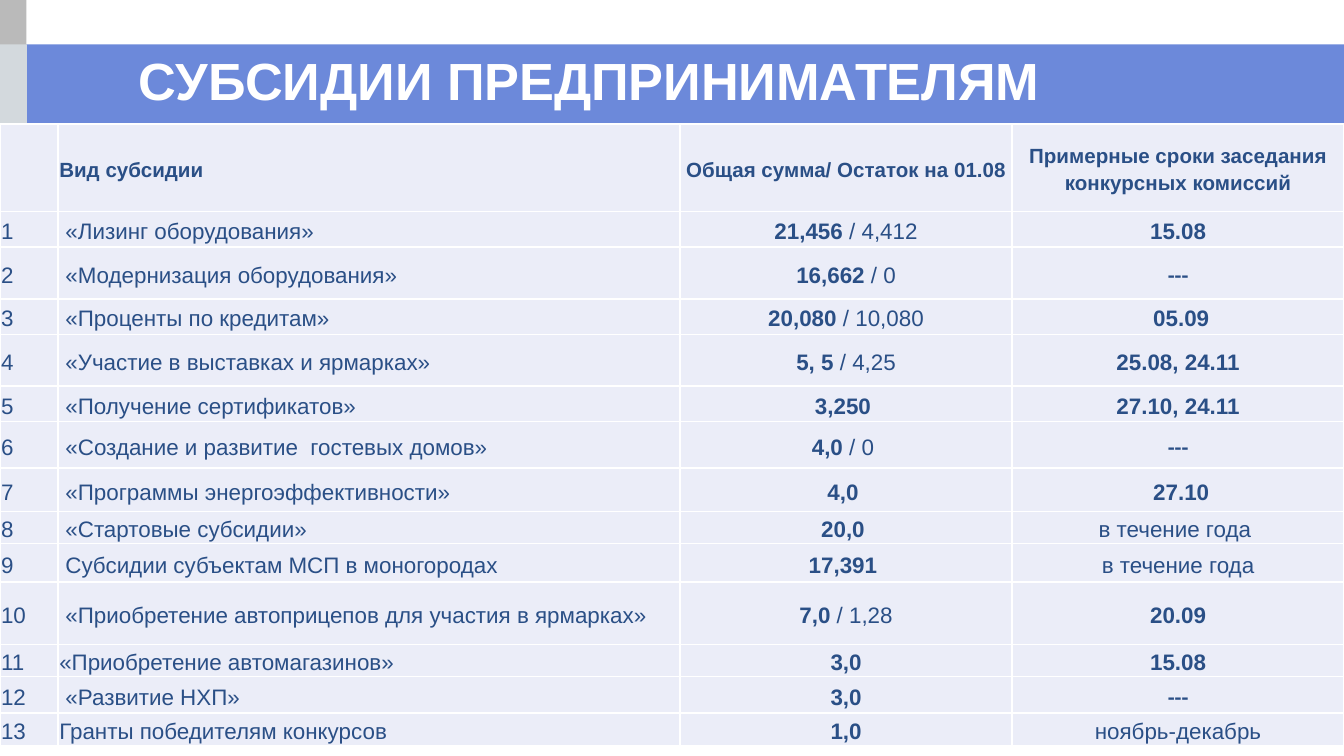
import dataclasses

import lxml.etree
import pptx
import pptx.dml.color
import pptx.enum.shapes
import pptx.enum.text
import pptx.oxml.ns
import pptx.util

Cm = pptx.util.Cm
Pt = pptx.util.Pt
ALIGN = pptx.enum.text.PP_ALIGN
MIDDLE = pptx.enum.text.MSO_ANCHOR.MIDDLE


@dataclasses.dataclass(frozen=True)
class Theme:
    band: str = "6C89DA"
    strip: str = "BABABA"
    strip_accent: str = "D3D9DD"
    cell: str = "EBEDF8"
    text: str = "2A4F86"
    white: str = "FFFFFF"
    font: str = "Arial"
    dash_font: str = "Calibri"
    title_size: int = 28
    header_size: int = 11
    body_size: int = 12
    border: int = 1
    panel_border: int = 2


COLUMN_WIDTHS = [1.1, 11.75, 6.28, 6.27]
ROW_HEIGHTS = [1.66, 0.67, 0.98, 0.67, 0.98, 0.67, 0.88,
               0.82, 0.6, 0.73, 1.18, 0.6, 0.69, 0.61]
HEADERS = ["", "Вид субсидии", "Общая сумма/ Остаток на 01.08",
           "Примерные сроки заседания конкурсных комиссий"]
# Name of the subsidy, total, remainder, commission dates
SUBSIDIES = [
    (" «Лизинг оборудования»", "21,456", " / 4,412", "15.08"),
    (" «Модернизация оборудования»", "16,662", " / 0", "---"),
    (" «Проценты по кредитам»", "20,080", " / 10,080", " 05.09"),
    (" «Участие в выставках и ярмарках»", "5, 5 ", "/ 4,25", "25.08, 24.11"),
    (" «Получение сертификатов»", "3,250 ", "", "27.10, 24.11"),
    (" «Создание и развитие  гостевых домов»", "4,0", " / 0 ", "---"),
    (" «Программы энергоэффективности»", "4,0 ", "", " 27.10"),
    (" «Стартовые субсидии»", "20,0 ", "", "в течение года "),
    (" Субсидии субъектам МСП в моногородах", "17,391 ", "", "в течение года"),
    (" «Приобретение автоприцепов для участия в ярмарках»", "7,0", " / 1,28", "20.09"),
    ("«Приобретение автомагазинов»", "3,0", "", "15.08"),
    (" «Развитие НХП»", "3,0", "", "---"),
    ("Гранты победителям конкурсов", "1,0", "", "ноябрь-декабрь"),
]


def rgb(color):
    return pptx.dml.color.RGBColor.from_string(color)


def apply(target, formats):
    for name, value in formats.items():
        setattr(target, name, value)


class SlideBuilder:
    def __init__(self, page, theme):
        self.page = page
        self.theme = theme

    def rectangle(self, left, top, width, height, color, border=0):
        shape = self.page.shapes.add_shape(
            pptx.enum.shapes.MSO_SHAPE.RECTANGLE,
            Cm(left), Cm(top), Cm(width), Cm(height))
        shape.shadow.inherit = False
        shape.fill.solid()
        shape.fill.fore_color.rgb = rgb(color)
        if border:
            shape.line.color.rgb = rgb(color)
            shape.line.width = Pt(border)
        else:
            shape.line.fill.background()

    def span(self, para, text, size, color, bold=True, font=None):
        span = para.add_run()
        span.text = text
        apply(span.font, {"name": font or self.theme.font,
                          "size": Pt(size), "bold": bold})
        span.font.color.rgb = rgb(color)

    def title(self, left, top, width, height, text):
        box = self.page.shapes.add_textbox(Cm(left), Cm(top), Cm(width), Cm(height))
        apply(box.text_frame, {"word_wrap": True, "vertical_anchor": MIDDLE})
        para = box.text_frame.paragraphs[0]
        para.alignment = ALIGN.CENTER
        self.span(para, text, self.theme.title_size, self.theme.white)

    def borders(self, cell):
        properties = cell._tc.get_or_add_tcPr()
        for index, side in enumerate(("a:lnL", "a:lnR", "a:lnT", "a:lnB")):
            line = lxml.etree.Element(pptx.oxml.ns.qn(side),
                                      w=str(Pt(self.theme.border)))
            fill = lxml.etree.SubElement(line, pptx.oxml.ns.qn("a:solidFill"))
            lxml.etree.SubElement(fill, pptx.oxml.ns.qn("a:srgbClr"),
                                  val=self.theme.white)
            properties.insert(index, line)

    def cell(self, cell, spans, size, centred):
        """Fill a cell with spans given as (text, bold, font)."""
        apply(cell, {"vertical_anchor": MIDDLE, "margin_left": Cm(0.02),
                     "margin_right": Cm(0.02), "margin_top": Cm(0.02),
                     "margin_bottom": Cm(0)})
        cell.fill.solid()
        cell.fill.fore_color.rgb = rgb(self.theme.cell)
        self.borders(cell)
        para = cell.text_frame.paragraphs[0]
        apply(para, {"alignment": ALIGN.CENTER if centred else ALIGN.LEFT,
                     "line_spacing": 1.15, "space_after": Pt(10)})
        for text, bold, font in spans:
            if text:
                self.span(para, text, size, self.theme.text, bold, font)

    def table(self, left, top, widths, heights, rows):
        table = self.page.shapes.add_table(
            len(heights), len(widths), Cm(left), Cm(top),
            Cm(sum(widths)), Cm(sum(heights))).table
        apply(table, {"first_row": False, "horz_banding": False})
        for column, width in zip(table.columns, widths):
            column.width = Cm(width)
        for row, height in zip(table.rows, heights):
            row.height = Cm(height)
        for row_index, row in enumerate(rows):
            size = self.theme.body_size if row_index else self.theme.header_size
            for column_index, spans in enumerate(row):
                self.cell(table.cell(row_index, column_index), spans, size,
                          centred=column_index >= 2)


def subsidy_rows(theme):
    """Headers, totals and dates are bold; everything else is regular."""
    rows = [[[(header, True, theme.font)] for header in HEADERS]]
    for number, (name, total, rest, dates) in enumerate(SUBSIDIES, 1):
        is_date = not any(letter.isalpha() for letter in dates)
        date_font = theme.dash_font if dates == "---" else theme.font
        rows.append([
            [(str(number), False, theme.font)],
            [(name, False, theme.font)],
            [(total, True, theme.font), (rest, False, theme.font)],
            [(dates, is_date, date_font)],
        ])
    return rows


def main():
    theme = Theme()
    deck = pptx.Presentation()
    apply(deck, {"slide_width": Cm(25.4), "slide_height": Cm(14.29)})
    page = deck.slides.add_slide(deck.slide_layouts[6])
    builder = SlideBuilder(page, theme)
    builder.rectangle(0, 0.84, 25.4, 1.5, theme.band)
    builder.rectangle(-0.02, 0, 0.52, 14.29, theme.strip)
    builder.rectangle(0, 0.84, 0.51, 1.5, theme.strip_accent)
    builder.rectangle(0, 2.62, 25.4, 11.67, theme.white, theme.panel_border)
    builder.title(-0.3, 0.32, 22.86, 2.39, "СУБСИДИИ ПРЕДПРИНИМАТЕЛЯМ")
    builder.table(0, 2.34, COLUMN_WIDTHS, ROW_HEIGHTS, subsidy_rows(theme))
    deck.save("out.pptx")


if __name__ == "__main__":
    main()
